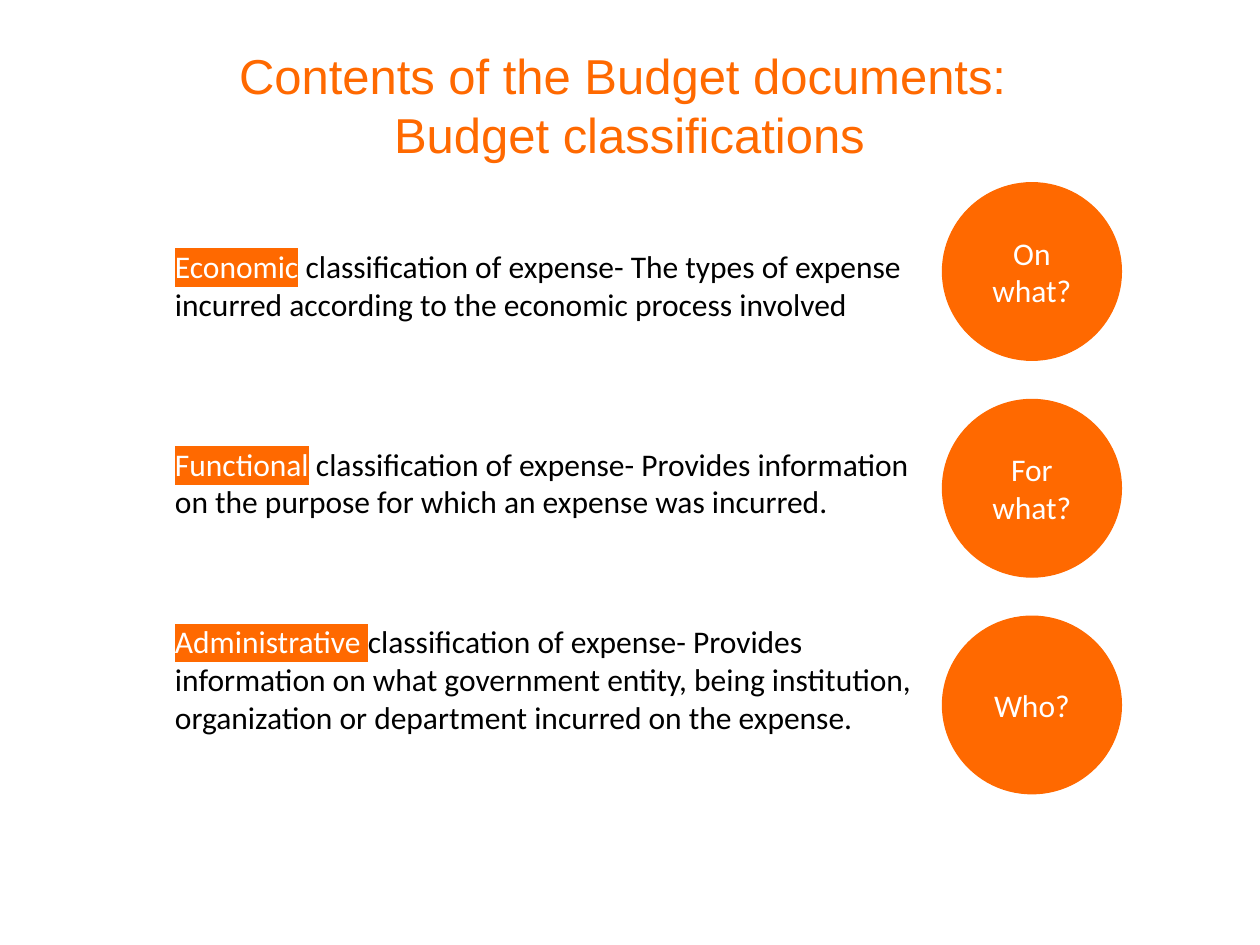
from lxml.etree import SubElement
from pptx import Presentation
from pptx.dml.color import RGBColor
from pptx.enum.shapes import MSO_SHAPE
from pptx.enum.text import MSO_ANCHOR, MSO_AUTO_SIZE, PP_ALIGN
from pptx.oxml.ns import qn
from pptx.util import Inches, Pt

HUES = {"orange": "FF6900", "white": "FFFFFF", "black": "000000"}

ROWS = [
    (1.91, 0.71, "Economic",
     " classification of expense- The types of expense incurred "
     "according to the economic process involved", "On what?"),
    (3.48, 0.71, "Functional",
     " classification of expense- Provides information on the purpose "
     "for which an expense was incurred.", "For what?"),
    (4.89, 1.01, "Administrative ",
     "classification of expense- Provides information on what government "
     "entity, being institution, organization or department incurred on "
     "the expense.", "Who?"),
]


class Deck:
    """Holds the style and the current slide, and draws each kind of element."""

    def __init__(self, slide):
        self.slide = slide
        self.head = "Arial"
        self.body = "Calibri"

    def hue(self, name):
        return RGBColor.from_string(HUES[name])

    def style(self, run, size, face, hue):
        run.font.size = Pt(size)
        run.font.name = face
        run.font.color.rgb = self.hue(hue)

    def mark(self, run, hue):
        props = run.font._element
        light = SubElement(props, qn("a:highlight"))
        SubElement(light, qn("a:srgbClr"), val=HUES[hue])
        props.find(qn("a:solidFill")).addnext(light)

    def box(self, left, top, width, height, wrap=True):
        shape = self.slide.shapes.add_textbox(
            Inches(left), Inches(top), Inches(width), Inches(height))
        frame = shape.text_frame
        frame.word_wrap = wrap
        frame.auto_size = MSO_AUTO_SIZE.SHAPE_TO_FIT_TEXT
        return frame

    def title(self, text):
        frame = self.box(1.76, 0.31, 6.47, 1.04, wrap=False)
        frame.text = text
        for para in frame.paragraphs:
            para.alignment = PP_ALIGN.CENTER
            self.style(para.runs[0], 28, self.head, "orange")

    def entry(self, top, height, term, rest):
        para = self.box(1.29, top, 6.19, height).paragraphs[0]
        para.text = term
        self.style(para.runs[0], 18, self.body, "white")
        self.mark(para.runs[0], "orange")
        tail = para.add_run()
        tail.text = rest
        self.style(tail, 18, self.body, "black")

    def disc(self, top, text):
        shape = self.slide.shapes.add_shape(
            MSO_SHAPE.OVAL, Inches(7.48), Inches(top), Inches(1.42), Inches(1.41))
        shape.shadow.inherit = False
        shape.fill.solid()
        shape.fill.fore_color.rgb = self.hue("orange")
        shape.line.color.rgb = self.hue("orange")
        shape.line.width = Pt(0.75)
        frame = shape.text_frame
        frame.word_wrap = True
        frame.vertical_anchor = MSO_ANCHOR.MIDDLE
        frame.text = text
        para = frame.paragraphs[0]
        para.alignment = PP_ALIGN.CENTER
        self.style(para.runs[0], 18, self.body, "white")


def main():
    prs = Presentation()
    prs.slide_width, prs.slide_height = Inches(10), Inches(7.5)
    deck = Deck(prs.slides.add_slide(prs.slide_layouts[6]))
    deck.title("Contents of the Budget documents: \nBudget classifications")
    for num, (top, height, term, rest, ask) in enumerate(ROWS):
        deck.entry(top, height, term, rest)
        deck.disc(1.45 + 1.72 * num, ask)
    prs.save("out.pptx")


if __name__ == "__main__":
    main()
